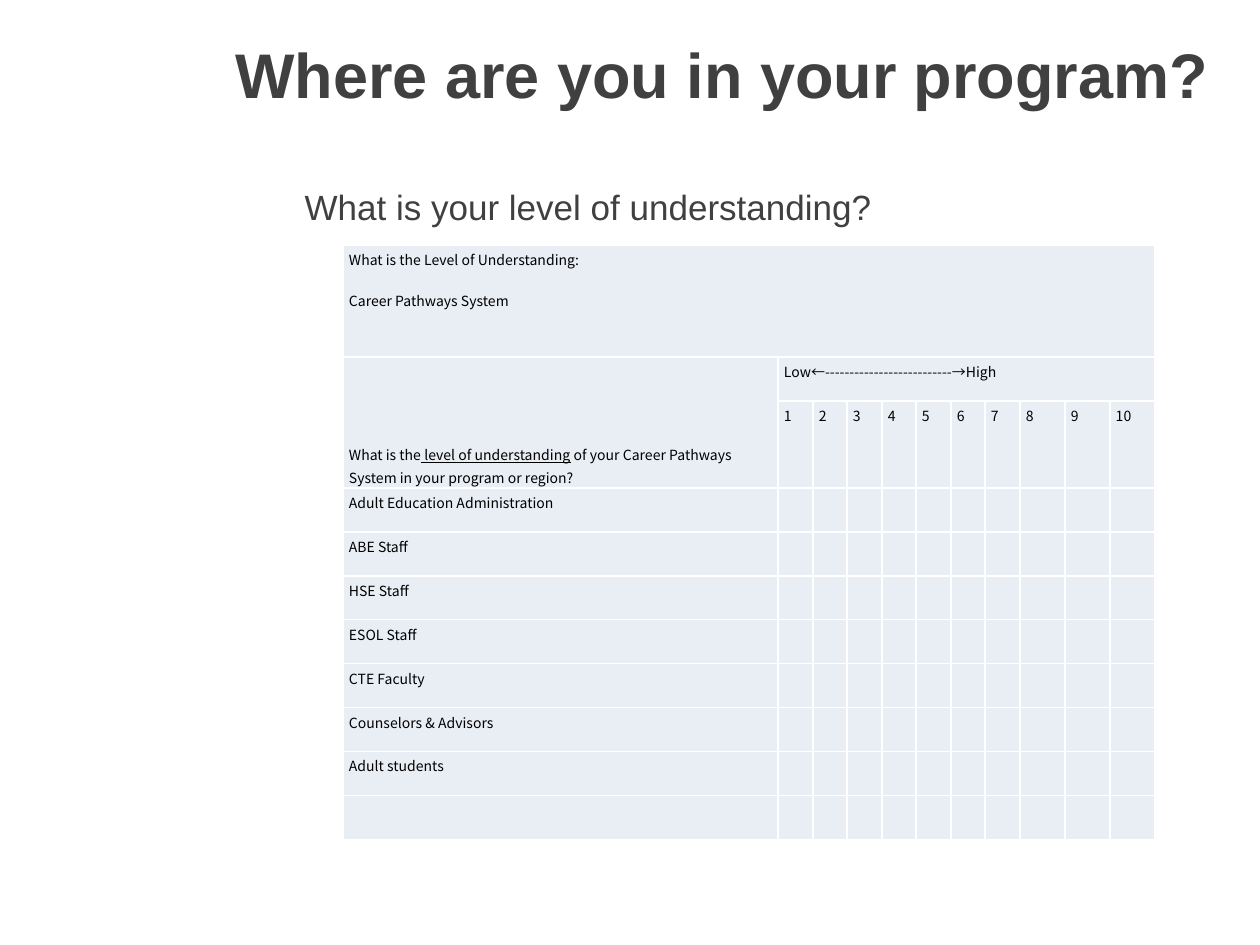
from dataclasses import dataclass
from typing import NamedTuple

from lxml.etree import SubElement
from pptx import Presentation
from pptx.dml.color import RGBColor
from pptx.enum.text import MSO_ANCHOR, MSO_AUTO_SIZE, PP_ALIGN
from pptx.oxml import parse_xml
from pptx.oxml.ns import nsdecls, qn
from pptx.util import Emu, Pt

EMU_PER_PX = 914400 / 126


@dataclass(frozen=True)
class Theme:
    heading_font: str = "Arial"
    table_font: str = "Noto Sans CJK KR"
    heading_color: str = "404040"
    table_color: str = "000000"
    cell_fill: str = "E9EDF4"
    border: str = "FFFFFF"
    title_size: int = 36
    subtitle_size: int = 20
    table_size: int = 8


THEME = Theme()


class Box(NamedTuple):
    left: int
    top: int
    width: int
    height: int


class Run(NamedTuple):
    text: str
    underline: bool = False


class CellText(NamedTuple):
    row: int
    column: int
    paragraphs: list[list[Run]]
    anchor: MSO_ANCHOR = MSO_ANCHOR.TOP


def px(length: int) -> Emu:
    return Emu(round(length * EMU_PER_PX))


def apply(target: object, values: dict) -> None:
    for name, value in values.items():
        setattr(target, name, value)


def even_split(total: int, count: int) -> list[int]:
    """Split a length into whole parts that add up exactly."""
    edges = [round(total * index / count) for index in range(count + 1)]
    return [end - start for start, end in zip(edges, edges[1:])]


def fill_placeholder(shape, box: Box, text: str, size: int, bold: bool) -> None:
    apply(shape, {name: px(value) for name, value in box._asdict().items()})
    frame = shape.text_frame
    frame.text = text
    apply(frame, {"word_wrap": True, "auto_size": MSO_AUTO_SIZE.NONE,
                  "vertical_anchor": MSO_ANCHOR.MIDDLE})
    paragraph = frame.paragraphs[0]
    properties = paragraph._p.get_or_add_pPr()
    apply(paragraph, {"alignment": PP_ALIGN.LEFT, "space_before": Pt(0)})
    properties.set("marL", "0")
    properties.set("indent", "0")
    SubElement(properties, qn("a:buNone"))
    font = paragraph.runs[0].font
    apply(font, {"name": THEME.heading_font, "size": Pt(size), "bold": bold})
    font.color.rgb = RGBColor.from_string(THEME.heading_color)


def style_cell(cell) -> None:
    apply(cell, {"margin_left": px(6), "margin_right": px(6),
                 "margin_top": px(1), "margin_bottom": px(0)})
    cell.fill.solid()
    cell.fill.fore_color.rgb = RGBColor.from_string(THEME.cell_fill)
    properties = cell._tc.get_or_add_tcPr()
    for index, side in enumerate(("lnL", "lnR", "lnT", "lnB")):
        properties.insert(index, parse_xml(
            f'<a:{side} {nsdecls("a")} w="{Pt(1)}"><a:solidFill>'
            f'<a:srgbClr val="{THEME.border}"/></a:solidFill></a:{side}>'))
    SubElement(cell.text_frame.paragraphs[0]._p, qn("a:endParaRPr"),
               sz=str(THEME.table_size * 100))


def write_cell(cell, content: CellText) -> None:
    cell.vertical_anchor = content.anchor
    frame = cell.text_frame
    for index, runs in enumerate(content.paragraphs):
        paragraph = frame.add_paragraph() if index else frame.paragraphs[0]
        apply(paragraph, {"line_spacing": 1.15, "space_after": Pt(10)})
        for text, underline in runs:
            run = paragraph.add_run()
            run.text = text
            apply(run.font, {"name": THEME.table_font, "size": Pt(THEME.table_size),
                             "underline": underline})
            run.font.color.rgb = RGBColor.from_string(THEME.table_color)
            SubElement(run._r.get_or_add_rPr(), qn("a:ea"), typeface=THEME.table_font)


def add_rating_table(slide, box: Box, columns: list[int], rows: list[int],
                     contents: list[CellText]) -> None:
    table = slide.shapes.add_table(
        len(rows), len(columns), *(px(value) for value in box)).table
    apply(table, {"first_row": False, "horz_banding": False})
    for column, width in zip(table.columns, columns):
        column.width = px(width)
    for row, height in zip(table.rows, rows):
        row.height = px(height)
    for cell in table.iter_cells():
        style_cell(cell)
    last = len(columns) - 1
    for start, end in (((0, 0), (0, last)), ((1, 0), (2, 0)), ((1, 1), (1, last))):
        table.cell(*start).merge(table.cell(*end))
    for content in contents:
        write_cell(table.cell(content.row, content.column), content)


def main() -> None:
    presentation = Presentation()
    apply(presentation, {"slide_width": px(1260), "slide_height": px(945)})
    slide = presentation.slides.add_slide(presentation.slide_layouts[1])
    title, body = slide.placeholders
    fill_placeholder(title, Box(223, 0, 1037, 147), "Where are you in your program?",
                     THEME.title_size, True)
    fill_placeholder(body, Box(292, 175, 905, 63), "What is your level of understanding?",
                     THEME.subtitle_size, False)

    groups = ["Adult Education Administration", "ABE Staff", "HSE Staff", "ESOL Staff",
              "CTE Faculty", "Counselors & Advisors", "Adult students"]
    contents = [
        CellText(0, 0, [[Run("What is the Level of Understanding:")],
                        [Run("Career Pathways System")]]),
        CellText(1, 0, [[Run("What is the"), Run(" level of understanding", True),
                         Run(" of your Career Pathways System in your program or region?")]],
                 MSO_ANCHOR.BOTTOM),
        CellText(1, 1, [[Run("Low←--------------------------→High")]]),
        *(CellText(2, score, [[Run(str(score))]]) for score in range(1, 11)),
        *(CellText(row, 0, [[Run(group)]]) for row, group in enumerate(groups, 3)),
    ]
    columns = [435, *even_split(242, 7), *[45] * 3]
    rows = [112, 44, 87, *[44] * (len(groups) + 1)]
    add_rating_table(slide, Box(343, 245, sum(columns), sum(rows)), columns, rows, contents)
    presentation.save("out.pptx")


if __name__ == "__main__":
    main()
